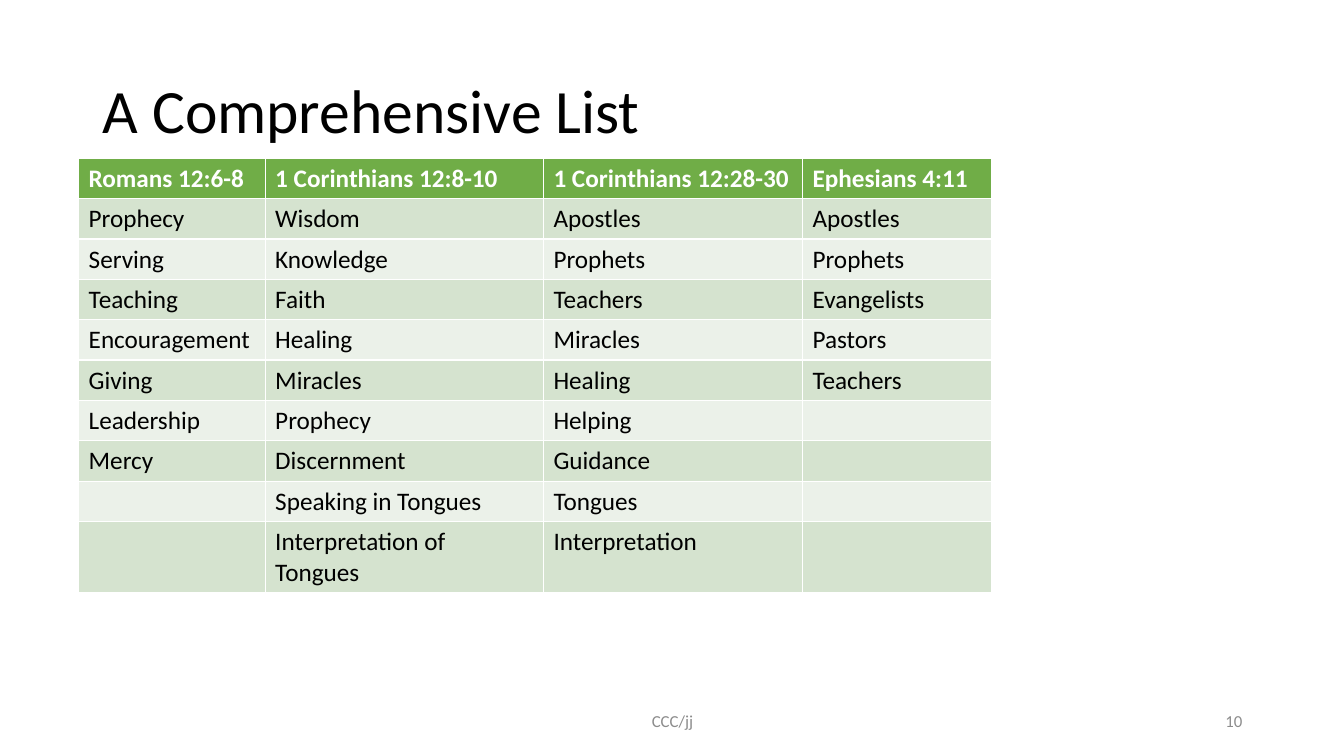
from pptx import Presentation
from pptx.dml.color import RGBColor
from pptx.enum.text import MSO_ANCHOR, PP_ALIGN
from pptx.util import Inches, Pt

FONT = "Calibri"
HEADER_FILL, BANDS = "70AD47", ("D5E3CF", "EBF1E9")
GIFTS = {
    "Romans 12:6-8": ["Prophecy", "Serving", "Teaching", "Encouragement",
                      "Giving", "Leadership", "Mercy"],
    "1 Corinthians 12:8-10": ["Wisdom", "Knowledge", "Faith", "Healing", "Miracles",
                              "Prophecy", "Discernment", "Speaking in Tongues",
                              "Interpretation of Tongues"],
    "1 Corinthians 12:28-30": ["Apostles", "Prophets", "Teachers", "Miracles", "Healing",
                               "Helping", "Guidance", "Tongues", "Interpretation"],
    "Ephesians 4:11": ["Apostles", "Prophets", "Evangelists", "Pastors", "Teachers"],
}
COL_WIDTHS = (1.85, 2.76, 2.57, 1.88)
ROW_HEIGHT, LAST_ROW_HEIGHT = 0.4, 0.71
TABLE_LEFT, TABLE_TOP = 0.78, 1.57
TEXTS = [
    ("A Comprehensive List", (0.92, 0.4, 11.5, 1.45), 44, "000000", PP_ALIGN.LEFT, 0.9),
    ("CCC/jj", (4.42, 6.95, 4.5, 0.4), 12, "8C8C8C", PP_ALIGN.CENTER, 1),
    ("10", (9.42, 6.95, 3, 0.4), 12, "8C8C8C", PP_ALIGN.RIGHT, 1),
]


def rgb(color):
    return RGBColor.from_string(color)


def add_run(p, text, size, color, bold=False):
    r = p.add_run()
    r.text = text
    r.font.name, r.font.size, r.font.bold = FONT, Pt(size), bold
    r.font.color.rgb = rgb(color)


def add_text(s, text, box, size, color, align, spacing):
    tf = s.shapes.add_textbox(*map(Inches, box)).text_frame
    tf.word_wrap = True
    tf.vertical_anchor = MSO_ANCHOR.MIDDLE
    p = tf.paragraphs[0]
    p.alignment, p.line_spacing = align, spacing
    add_run(p, text, size, color)


def add_gifts_table(s):
    heights = [ROW_HEIGHT] * max(map(len, GIFTS.values())) + [LAST_ROW_HEIGHT]
    box = (TABLE_LEFT, TABLE_TOP, sum(COL_WIDTHS), sum(heights))
    table = s.shapes.add_table(len(heights), len(GIFTS), *map(Inches, box)).table
    for row, height in zip(table.rows, heights):
        row.height = Inches(height)
    for j, (passage, gifts) in enumerate(GIFTS.items()):
        table.columns[j].width = Inches(COL_WIDTHS[j])
        for i in range(len(heights)):
            cell = table.cell(i, j)
            cell.fill.solid()
            cell.fill.fore_color.rgb = rgb(BANDS[(i - 1) % 2] if i else HEADER_FILL)
            p = cell.text_frame.paragraphs[0]
            if i == 0:
                add_run(p, passage, 18, "FFFFFF", True)
            elif i <= len(gifts):
                add_run(p, gifts[i - 1], 18, "000000")


prs = Presentation()
prs.slide_width, prs.slide_height = Inches(13.33), Inches(7.5)
s = prs.slides.add_slide(prs.slide_layouts[6])
add_text(s, *TEXTS[0])
add_gifts_table(s)
for label in TEXTS[1:]:
    add_text(s, *label)
prs.save("out.pptx")
